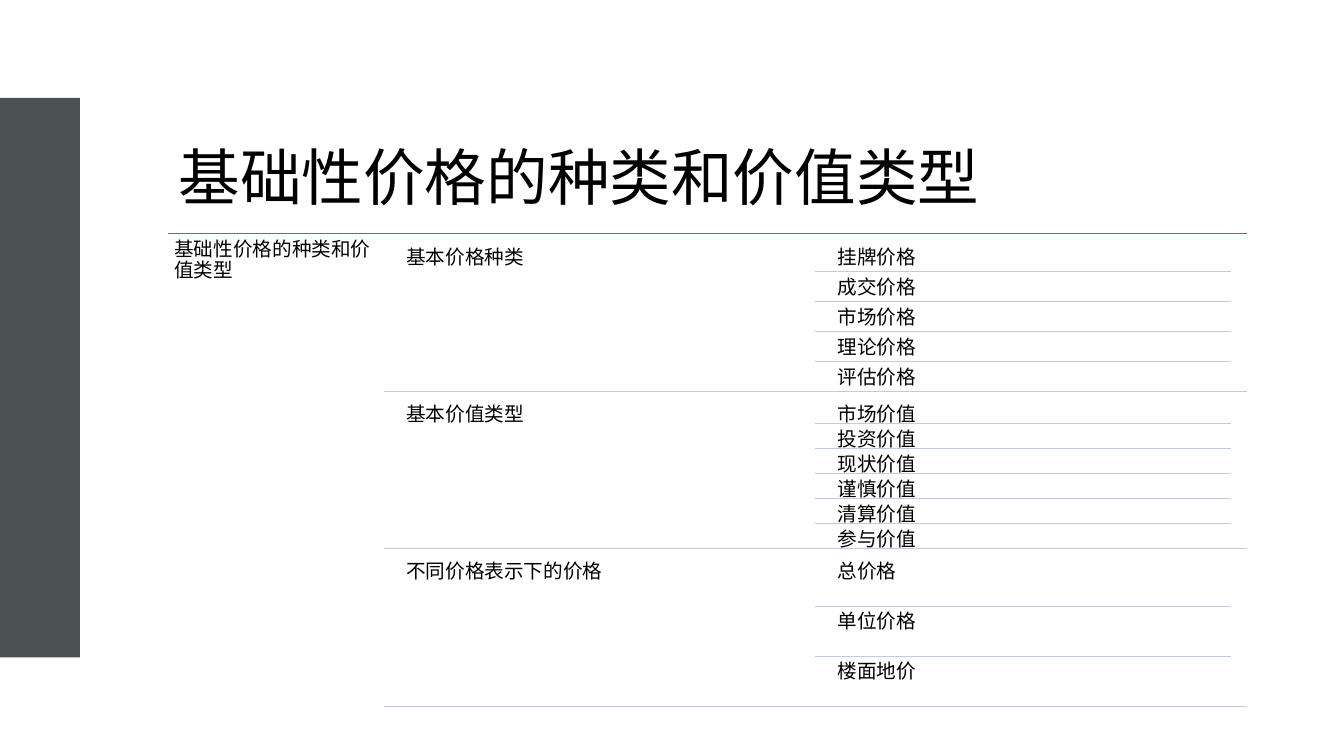
from lxml.etree import SubElement as Sub
from pptx import Presentation
from pptx.dml.color import RGBColor
from pptx.enum.shapes import MSO_CONNECTOR as Link, MSO_SHAPE as Shape
from pptx.enum.text import MSO_ANCHOR as Anchor, MSO_AUTO_SIZE as Fit, PP_ALIGN as Align
from pptx.oxml.ns import qn
from pptx.util import Pt

TITLE = "基础性价格的种类和价值类型"
GROUPS = [
    ("基本价格种类", ["挂牌价格", "成交价格", "市场价格", "理论价格", "评估价格"]),
    ("基本价值类型", ["市场价值", "投资价值", "现状价值", "谨慎价值", "清算价值", "参与价值"]),
    ("不同价格表示下的价格", ["总价格", "单位价格", "楼面地价"]),
]

FONT = "Noto Sans CJK SC"
BLACK = RGBColor(0, 0, 0)
WHITE = RGBColor(255, 255, 255)
SLATE = RGBColor(0x4C, 0x52, 0x54)
BLUE = RGBColor(0x44, 0x72, 0xC4)
PALE = RGBColor(0xC1, 0xC9, 0xE4)

LEFT, RIGHT, TOP = 120.3, 890.7, 167
MID, LAST = 285.9, 594
WIDE, INDENT = 296.7, 11.5
STEP, GAP = 112.4, 5.4
TALL = STEP - GAP
BAND = {"top": Pt(70), "height": Pt(399.6)}
INSET = dict.fromkeys(
    ["margin_left", "margin_right", "margin_top", "margin_bottom"], Pt(4.2))
LABEL = {**INSET, "word_wrap": True, "auto_size": Fit.NONE,
         "vertical_anchor": Anchor.TOP}
HEAD = {"word_wrap": True, "auto_size": Fit.NONE,
        "vertical_anchor": Anchor.MIDDLE}


def assign(item, values):
    for key, value in values.items():
        setattr(item, key, value)


def write(box, text, size, frame):
    assign(box.text_frame, frame)
    para = box.text_frame.paragraphs[0]
    assign(para, {"alignment": Align.LEFT, "line_spacing": 0.9})
    run = para.add_run()
    run.text = text
    assign(run.font, {"name": FONT, "size": Pt(size)})
    run.font.color.rgb = BLACK
    Sub(run.font._element, qn("a:ea"), typeface=FONT)


def label(text, x, y, w, h):
    box = shapes.add_textbox(Pt(x), Pt(y), Pt(w), Pt(h))
    write(box, text, 14, LABEL)


def rule(x, y, end, color):
    line = shapes.add_connector(Link.STRAIGHT, Pt(x), Pt(y), Pt(end), Pt(y))
    line.line.color.rgb = color
    line.line.width = Pt(0.5)
    return Sub(line._element.spPr, qn("a:effectLst"))


def block(x, w, color):
    rect = shapes.add_shape(Shape.RECTANGLE, Pt(x), BAND["top"], Pt(w), BAND["height"])
    rect.shadow.inherit = False
    rect.fill.solid()
    rect.fill.fore_color.rgb = color
    rect.line.fill.background()
    return rect


deck = Presentation()
assign(deck, {"slide_width": Pt(960), "slide_height": Pt(540)})
slide = deck.slides.add_slide(deck.slide_layouts[5])
shapes = slide.shapes

block(0, 57, SLATE)
panel = block(94.5, 865.5, WHITE)
tint = panel._element.spPr.find(".//" + qn("a:srgbClr"))
Sub(tint, qn("a:alpha"), val="80000")

title = shapes.title
shapes._spTree.append(title._element)
assign(title, {"left": Pt(LEFT), "top": Pt(82.8),
               "width": Pt(745.2), "height": Pt(92.9)})
write(title, TITLE, 44, HEAD)

glow = rule(LEFT, TOP, RIGHT, BLUE)
shade = Sub(glow, qn("a:outerShdw"), blurRad=str(Pt(4.5)), dist=str(Pt(1.5)),
            dir="5400000", algn="ctr", rotWithShape="0")
dark = Sub(shade, qn("a:srgbClr"), val=str(BLACK))
Sub(dark, qn("a:alpha"), val="63000")
label(TITLE, LEFT, TOP, 154, 3 * STEP + GAP)

for row, (name, items) in enumerate(GROUPS):
    base = TOP + row * STEP
    start = base + GAP
    label(name, MID, start, WIDE, TALL)
    pitch = TALL / len(items)
    for col, item in enumerate(items):
        y = start + col * pitch
        if col:
            rule(LAST - INDENT, y, LAST - INDENT + WIDE, PALE)
        label(item, LAST, y, WIDE, pitch)
    rule(MID - INDENT, base + STEP, RIGHT, PALE)

deck.save("out.pptx")
